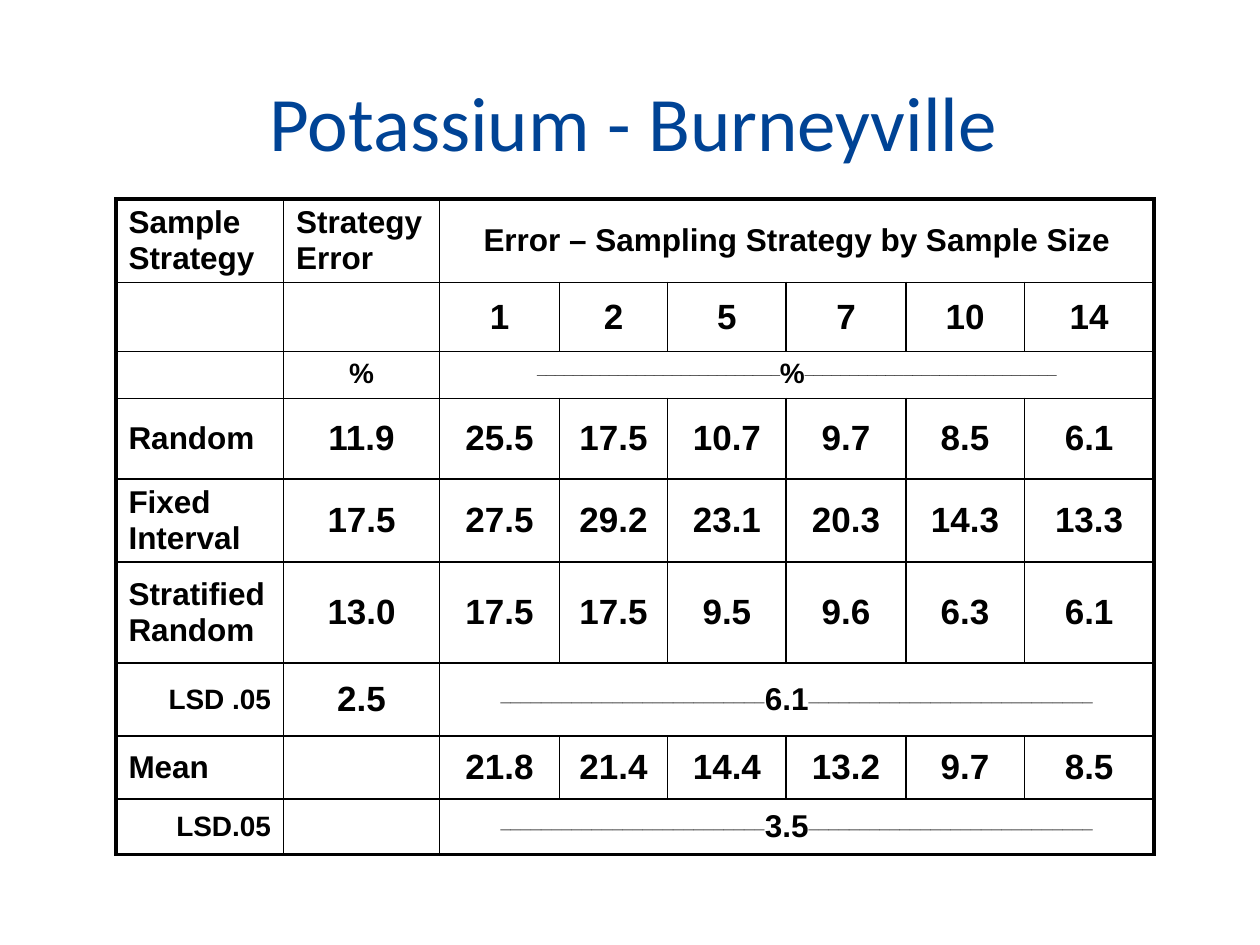
from lxml import etree
from pptx import Presentation
from pptx.dml.color import RGBColor
from pptx.enum.text import MSO_ANCHOR, PP_ALIGN
from pptx.oxml.ns import qn
from pptx.util import Inches, Pt

LEFT, CENTER, RIGHT = PP_ALIGN.LEFT, PP_ALIGN.CENTER, PP_ALIGN.RIGHT
TOP, MIDDLE = MSO_ANCHOR.TOP, MSO_ANCHOR.MIDDLE

COLORS = {"title": "004395", "ink": "000000"}
THICK, THIN = Pt(2.25), Pt(1)

COLUMN_WIDTHS = [1.33, 1.24, 0.95, 0.86, 0.94, 0.95, 0.94, 1.03]
ROW_HEIGHTS = [0.64, 0.55, 0.35, 0.64, 0.64, 0.8, 0.58, 0.5, 0.4]
FIRST_SIZE_COLUMN = 2

ROWS = [
    ["Sample Strategy", "Strategy Error", "Error – Sampling Strategy by Sample Size"],
    ["", "", "1", "2", "5", "7", "10", "14"],
    ["", "%", "%"],
    ["Random", "11.9", "25.5", "17.5", "10.7", "9.7", "8.5", "6.1"],
    ["Fixed Interval", "17.5", "27.5", "29.2", "23.1", "20.3", "14.3", "13.3"],
    ["Stratified Random", "13.0", "17.5", "17.5", "9.5", "9.6", "6.3", "6.1"],
    ["LSD .05", "2.5", "6.1"],
    ["Mean", "", "21.8", "21.4", "14.4", "13.2", "9.7", "8.5"],
    ["LSD.05", "", "3.5"],
]
HEADER_ROW, UNIT_ROW = 0, 2
# Underscores before and after the centred value of a row that spans all sizes
RULES = {2: (27, 28), 6: (26, 28), 8: (26, 28)}


def write_text(para, text, size=18, font="Arial", color="ink", bold=True,
               align=LEFT, raised=False):
    """Append one formatted run to a paragraph."""
    para.alignment = align
    span = para.add_run()
    span.text = text
    span.font.name, span.font.size, span.font.bold = font, Pt(size), bold
    span.font.color.rgb = RGBColor.from_string(COLORS[color])
    if raised:
        span.font._element.set("baseline", "30000")


def add_title(page, text):
    title = page.shapes.title
    title.left, title.top = Inches(0.75), Inches(0.42)
    title.width, title.height = Inches(8.5), Inches(1.08)
    title.text_frame.vertical_anchor = MIDDLE
    para = title.text_frame.paragraphs[0]
    write_text(para, text, size=44, font="Calibri", color="title",
               bold=False, align=CENTER)
    para._p.get_or_add_pPr().set("marL", str(Inches(0.06)))


def set_borders(cell, row, column):
    """Draw thick lines on the table's outer edge and thin ones inside."""
    outer = {
        "a:lnL": column == 0,
        "a:lnR": column + cell.span_width >= len(COLUMN_WIDTHS),
        "a:lnT": row == 0,
        "a:lnB": row == len(ROW_HEIGHTS) - 1,
    }
    properties = cell._tc.get_or_add_tcPr()
    for tag, is_outer in outer.items():
        line = etree.SubElement(properties, qn(tag), w=str(THICK if is_outer else THIN))
        fill = etree.SubElement(line, qn("a:solidFill"))
        etree.SubElement(fill, qn("a:srgbClr"), val=COLORS["ink"])


def cell_format(row, column, text):
    """Return the text size and alignment for a place in the table."""
    if row == UNIT_ROW or text.startswith("LSD"):
        size = 16
    elif row == HEADER_ROW or column == 0 or (row in RULES and column == FIRST_SIZE_COLUMN):
        size = 18
    else:
        size = 20
    if text.startswith("LSD"):
        return size, RIGHT
    is_label = column == 0 or (row == HEADER_ROW and column < FIRST_SIZE_COLUMN)
    return size, LEFT if is_label else CENTER


def fill_cell(cell, row, column, text):
    size, align = cell_format(row, column, text)
    at_top = row == UNIT_ROW or (row == HEADER_ROW and column < FIRST_SIZE_COLUMN)
    cell.vertical_anchor = TOP if at_top else MIDDLE
    para = cell.text_frame.paragraphs[0]
    if not text:
        etree.SubElement(para._p, qn("a:endParaRPr"), sz=str(size * 100))
        return
    has_rules = row in RULES and column == FIRST_SIZE_COLUMN
    before, after = RULES[row] if has_rules else (0, 0)
    for part, raised in (("_" * before, True), (text, False), ("_" * after, True)):
        if part:
            write_text(para, part, size=size, align=align, raised=raised)


def add_error_table(page):
    frame = page.shapes.add_table(
        len(ROW_HEIGHTS), len(COLUMN_WIDTHS), Inches(0.92), Inches(1.58),
        Inches(sum(COLUMN_WIDTHS)), Inches(sum(ROW_HEIGHTS)))
    table = frame.table
    table.first_row = table.horz_banding = False
    for column, width in zip(table.columns, COLUMN_WIDTHS):
        column.width = Inches(width)
    for row, height in zip(table.rows, ROW_HEIGHTS):
        row.height = Inches(height)

    for row, texts in enumerate(ROWS):
        if len(texts) < len(COLUMN_WIDTHS):
            table.cell(row, FIRST_SIZE_COLUMN).merge(table.cell(row, len(COLUMN_WIDTHS) - 1))
        for column in range(len(COLUMN_WIDTHS)):
            cell = table.cell(row, column)
            set_borders(cell, row, column)
            cell.fill.background()
            if column < len(texts):
                fill_cell(cell, row, column, texts[column])


def main():
    deck = Presentation()
    deck.slide_width, deck.slide_height = Inches(10), Inches(7.5)
    page = deck.slides.add_slide(deck.slide_layouts.get_by_name("Title Only"))
    add_title(page, "Potassium - Burneyville")
    add_error_table(page)
    deck.save("out.pptx")


if __name__ == "__main__":
    main()
